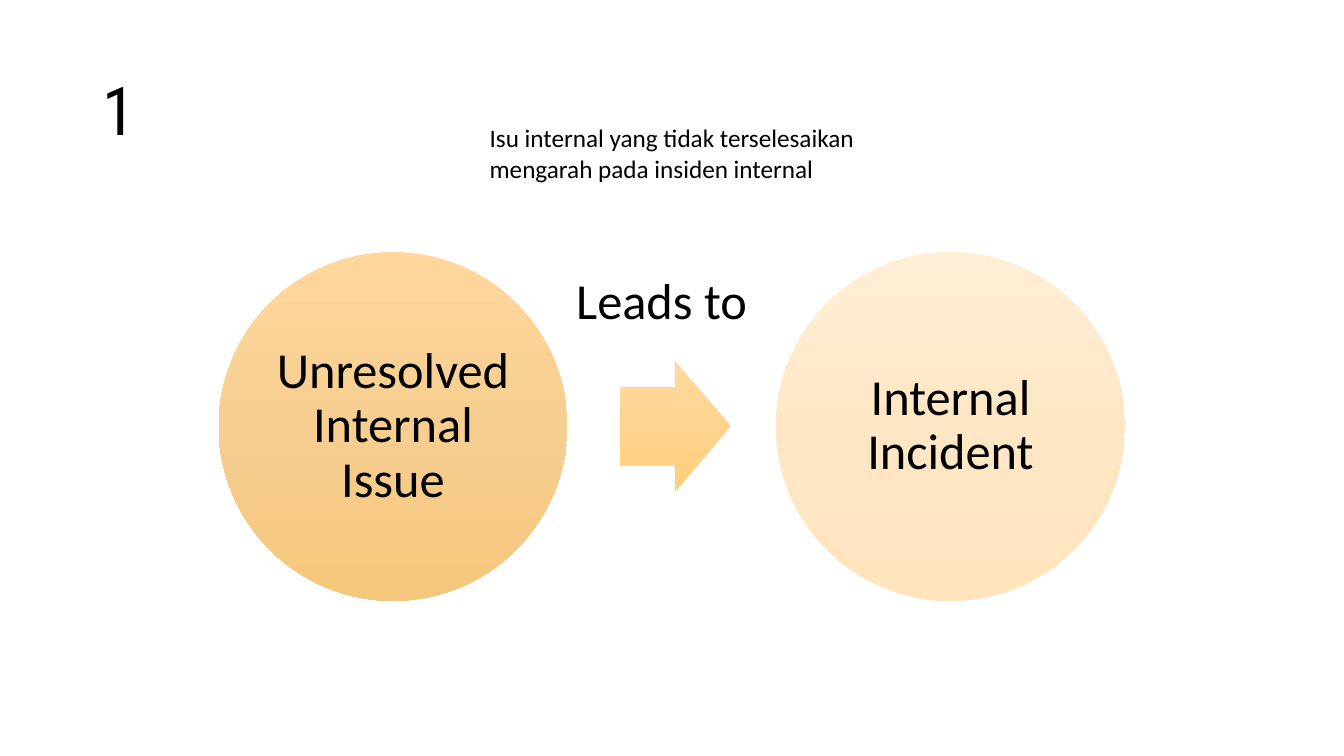
"""Build a slide showing how an unresolved issue leads to an incident."""
from copy import deepcopy

from pptx import Presentation
from pptx.dml.color import RGBColor
from pptx.enum.shapes import MSO_SHAPE
from pptx.enum.text import MSO_ANCHOR, PP_ALIGN
from pptx.util import Cm, Pt

ELLIPSE = MSO_SHAPE.OVAL
ARROW = MSO_SHAPE.RIGHT_ARROW
MIDDLE = MSO_ANCHOR.MIDDLE
TOP = MSO_ANCHOR.TOP
CENTER = PP_ALIGN.CENTER
LEFT = PP_ALIGN.LEFT

BODY_FONT = "Calibri"
TITLE_FONT = "Roboto Condensed"
CIRCLE_TOP = 6.35
CIRCLE_SIZE = 8.79


def color(value):
    """Return the colour for a hex string."""
    return RGBColor.from_string(value)


def write_text(shape, text, size, font=BODY_FONT, anchor=TOP, align=LEFT, spacing=1.0):
    """Write one styled paragraph into a shape."""
    frame = shape.text_frame
    frame.word_wrap = True
    frame.vertical_anchor = anchor
    paragraph = frame.paragraphs[0]
    paragraph.text = text
    paragraph.alignment = align
    paragraph.line_spacing = spacing
    paragraph.font.name = font
    paragraph.font.size = Pt(size)
    paragraph.font.color.rgb = color("000000")


def add_label(slide, bounds, text, size, **style):
    """Add a text box."""
    box = slide.shapes.add_textbox(*map(Cm, bounds))
    write_text(box, text, size, **style)


def add_gradient_shape(slide, kind, bounds, colors):
    """Add a borderless shape with a three-colour gradient from top to bottom."""
    shape = slide.shapes.add_shape(kind, *map(Cm, bounds))
    shape.shadow.inherit = False
    shape.line.fill.background()
    shape.fill.gradient()
    shape.fill.gradient_angle = 270
    stop_list = shape.element.xpath(".//a:gsLst")[0]
    stop_list.insert(1, deepcopy(stop_list[0]))
    for index, (stop, value) in enumerate(zip(shape.fill.gradient_stops, colors)):
        stop.position = index / 2
        stop.color.rgb = color(value)
    return shape


def add_circle(slide, left, text, colors):
    """Add a circle with centred text."""
    bounds = (left, CIRCLE_TOP, CIRCLE_SIZE, CIRCLE_SIZE)
    circle = add_gradient_shape(slide, ELLIPSE, bounds, colors)
    frame = circle.text_frame
    frame.margin_left = frame.margin_right = Cm(0.13)
    frame.margin_top = frame.margin_bottom = Cm(0.13)
    write_text(circle, text, 36, anchor=MIDDLE, align=CENTER, spacing=0.9)


def add_arrow(slide, bounds, colors):
    """Add a right arrow with a broad shaft."""
    arrow = add_gradient_shape(slide, ARROW, bounds, colors)
    arrow.adjustments[0] = 0.6
    arrow.adjustments[1] = 0.5


def main():
    """Build and save the presentation."""
    presentation = Presentation()
    presentation.slide_width = Cm(33.87)
    presentation.slide_height = Cm(19.05)
    slide = presentation.slides.add_slide(presentation.slide_layouts[6])

    add_label(slide, (2.34, 1.02, 29.21, 3.68), "1", 48,
              font=TITLE_FONT, anchor=MIDDLE, spacing=0.9)
    add_circle(slide, 5.51, "Unresolved Internal Issue", ("FFD79D", "F6CE90", "F5C77C"))
    add_arrow(slide, (15.62, 9.1, 2.79, 3.28), ("FFD99E", "FFD490", "FFCE7C"))
    add_circle(slide, 19.56, "Internal Incident", ("FFEED6", "FFE7C5", "FFE4BE"))
    add_label(slide, (14.27, 6.65, 5.97, 1.8), "Leads to", 36)
    add_label(slide, (12.09, 2.97, 10.34, 1.8),
              "Isu internal yang tidak terselesaikan mengarah pada insiden internal", 18)

    presentation.save("out.pptx")


if __name__ == "__main__":
    main()
